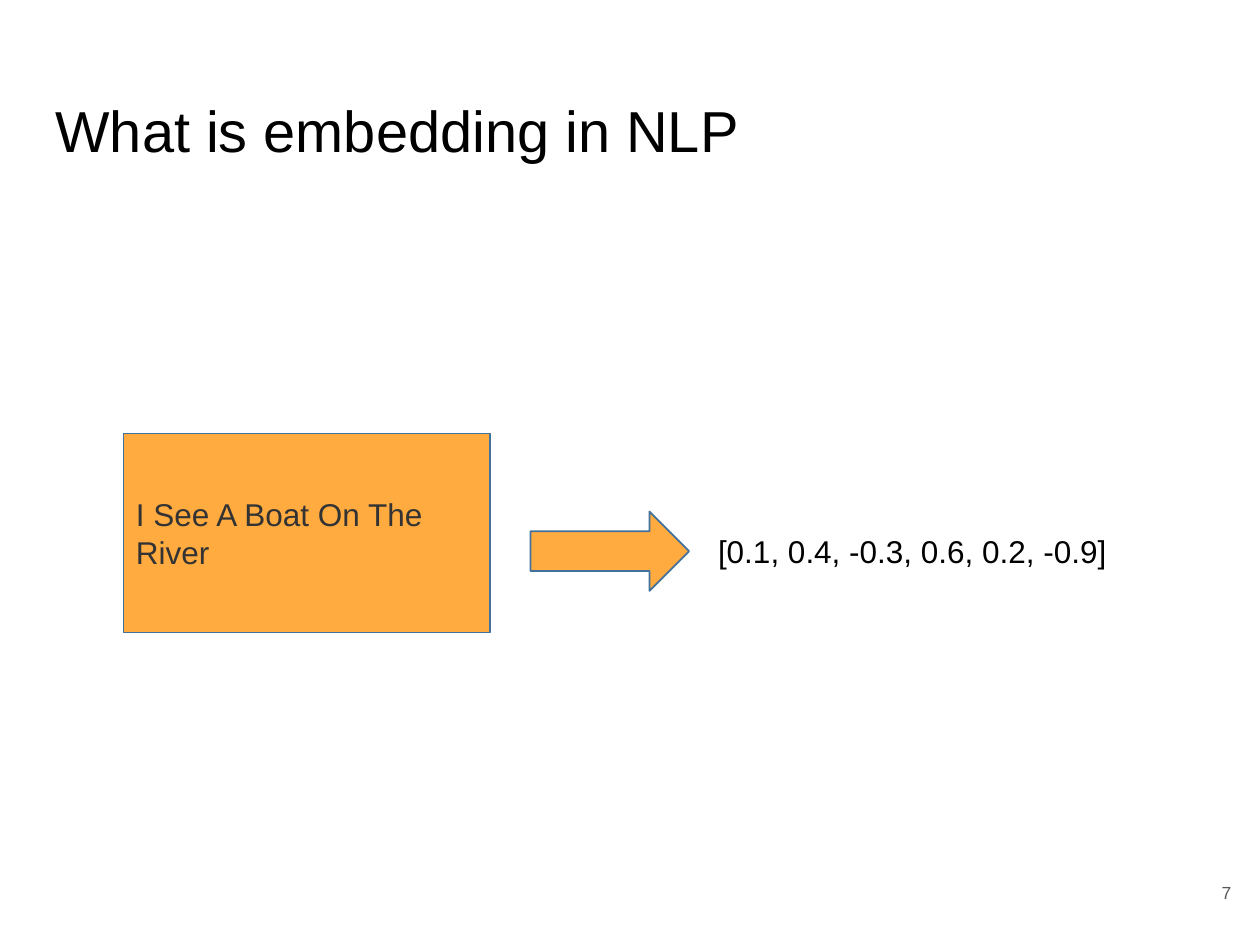
from typing import NamedTuple

from pptx import Presentation
from pptx import util as u
from pptx.dml.color import RGBColor
from pptx.enum import shapes, text

FONT = "Arial"
ORANGE, BLUE = "FFAB40", "42719B"
BLACK, DARK_GRAY, GRAY = "000000", "333333", "595959"


class Box(NamedTuple):
    left: float
    top: float
    width: float
    height: float

    def lengths(self) -> list:
        return [u.Inches(value) for value in self]


def color(hex_value: str) -> RGBColor:
    return RGBColor.from_string(hex_value)


def write(shape, words: str, *, size: float = 18, ink: str = BLACK,
          align=text.PP_ALIGN.LEFT, anchor=text.MSO_ANCHOR.MIDDLE,
          pad: float = 0.05, spacing: float = 1.0) -> None:
    frame = shape.text_frame
    frame.word_wrap = True
    frame.auto_size = text.MSO_AUTO_SIZE.NONE
    frame.vertical_anchor = anchor
    frame.margin_left = frame.margin_right = u.Inches(0.1)
    frame.margin_top = frame.margin_bottom = u.Inches(pad)
    paragraph = frame.paragraphs[0]
    paragraph.alignment = align
    paragraph.line_spacing = spacing
    run = paragraph.add_run()
    run.text = words
    run.font.name = FONT
    run.font.size = u.Pt(size)
    run.font.color.rgb = color(ink)


def add_orange_shape(slide, kind, box: Box):
    shape = slide.shapes.add_shape(kind, *box.lengths())
    shape.shadow.inherit = False
    shape.fill.solid()
    shape.fill.fore_color.rgb = color(ORANGE)
    shape.line.color.rgb = color(BLUE)
    shape.line.width = u.Pt(1)
    return shape


def add_label(slide, box: Box, words: str, **style) -> None:
    write(slide.shapes.add_textbox(*box.lengths()), words, **style)


def main() -> None:
    deck = Presentation()
    deck.slide_width, deck.slide_height = u.Inches(10), u.Inches(7.5)
    slide = deck.slides.add_slide(deck.slide_layouts[5])

    # Title
    title = slide.shapes.title
    title.left, title.top, title.width, title.height = Box(0.34, 0.65, 9.32, 0.83).lengths()
    write(title, "What is embedding in NLP", size=33, spacing=0.9)

    # Sentence, arrow and its embedding vector
    sentence = add_orange_shape(slide, shapes.MSO_SHAPE.RECTANGLE, Box(0.98, 3.44, 2.91, 1.58))
    write(sentence, "I See A Boat On The River", ink=DARK_GRAY)
    add_orange_shape(slide, shapes.MSO_SHAPE.RIGHT_ARROW, Box(4.21, 4.06, 1.26, 0.63))
    add_label(slide, Box(5.6, 4.17, 3.32, 0.4), "[0.1, 0.4, -0.3, 0.6, 0.2, -0.9]",
              anchor=text.MSO_ANCHOR.TOP)

    # Slide number
    add_label(slide, Box(9.27, 6.8, 0.6, 0.57), "7", size=10, ink=GRAY,
              align=text.PP_ALIGN.RIGHT, pad=0.1)

    deck.save("out.pptx")


if __name__ == "__main__":
    main()
